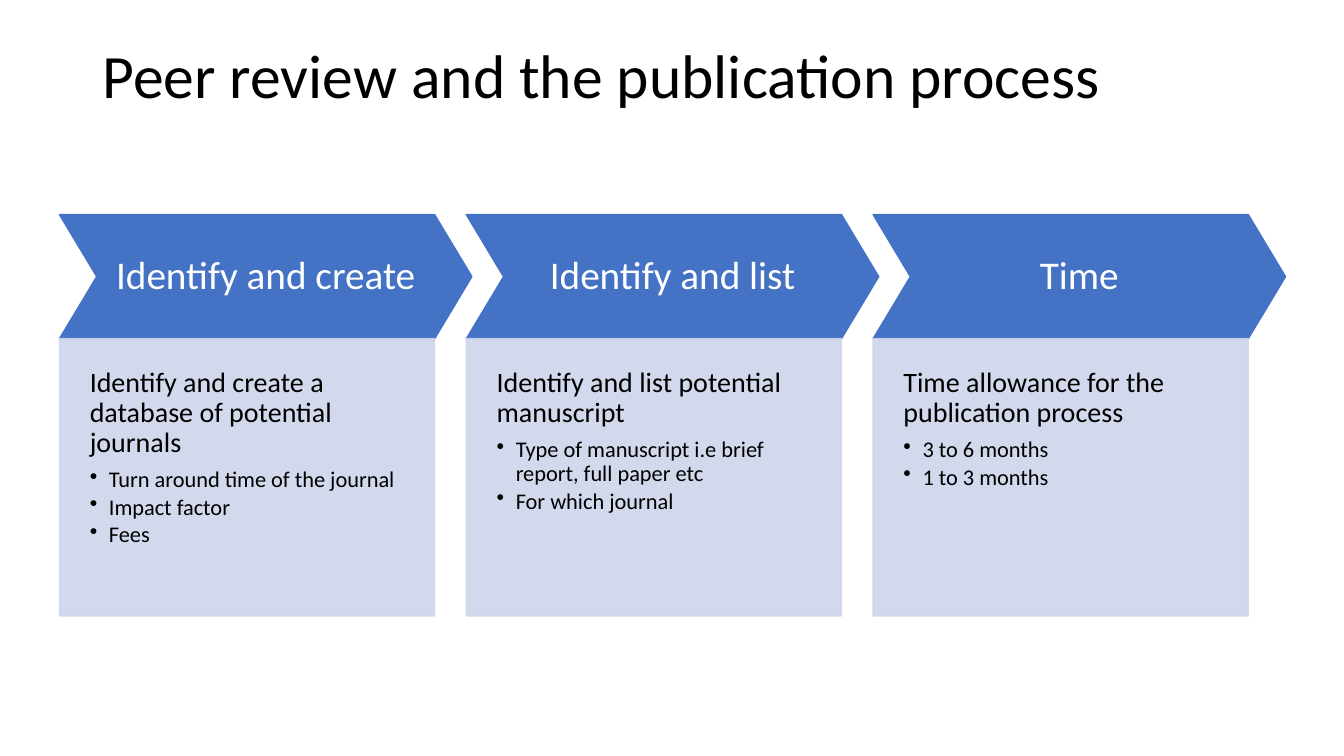
from dataclasses import dataclass

from lxml import etree
from pptx import Presentation
from pptx.dml.color import RGBColor
from pptx.enum.shapes import MSO_SHAPE
from pptx.enum.text import MSO_ANCHOR, PP_ALIGN
from pptx.oxml.ns import qn
from pptx.util import Inches, Pt

CHEVRON, RECTANGLE = MSO_SHAPE.CHEVRON, MSO_SHAPE.RECTANGLE
TOP, MIDDLE = MSO_ANCHOR.TOP, MSO_ANCHOR.MIDDLE
LEFT, CENTER = PP_ALIGN.LEFT, PP_ALIGN.CENTER


@dataclass(frozen=True)
class Theme:
    font: str = "Calibri"
    text: RGBColor = RGBColor(0x00, 0x00, 0x00)
    white: RGBColor = RGBColor(0xFF, 0xFF, 0xFF)
    step: RGBColor = RGBColor(0x44, 0x72, 0xC4)
    panel: RGBColor = RGBColor(0xCF, 0xD5, 0xEA)
    panel_opacity: int = 90
    title_size: int = 44
    step_size: int = 28
    lead_size: int = 20
    bullet_size: int = 16


THEME = Theme()

STEPS = [
    ("Identify and create",
     "Identify and create a database of potential journals",
     ["Turn around time of the journal", "Impact factor", "Fees"]),
    ("Identify and list",
     "Identify and list potential manuscript",
     ["Type of manuscript i.e brief report, full paper etc", "For which journal"]),
    ("Time",
     "Time allowance for the publication process",
     ["3 to 6 months", "1 to 3 months"]),
]

FIRST_LEFT, STEP_PITCH = 0.59, 4.035
STEP_TOP, STEP_WIDTH, STEP_HEIGHT = 2.13, 4.09, 1.23
PANEL_WIDTH, PANEL_HEIGHT = 3.72, 2.75
BULLET_INDENT = 0.19


def set_frame(tf, anchor, left, top, right, bottom):
    tf.word_wrap = True
    tf.vertical_anchor = anchor
    tf.margin_left, tf.margin_top = Inches(left), Inches(top)
    tf.margin_right, tf.margin_bottom = Inches(right), Inches(bottom)


def write(p, text, size, color, align=LEFT, after=0):
    p.text = text
    p.alignment = align
    p.line_spacing = 0.9
    p.space_after = Pt(size * after)
    for r in p.runs:
        r.font.name = THEME.font
        r.font.size = Pt(size)
        r.font.color.rgb = color


def add_bullet(p):
    p.level = 1
    pPr = p._p.get_or_add_pPr()
    pPr.set("marL", str(Inches(BULLET_INDENT)))
    pPr.set("indent", str(-Inches(BULLET_INDENT)))
    etree.SubElement(pPr, qn("a:buChar")).set("char", "•")


def set_opacity(shape, percent):
    for color in shape._element.spPr.iter(qn("a:srgbClr")):
        etree.SubElement(color, qn("a:alpha")).set("val", str(percent * 1000))


def add_block(s, kind, left, top, width, height, color):
    sp = s.shapes.add_shape(kind, Inches(left), Inches(top), Inches(width), Inches(height))
    sp.shadow.inherit = False
    sp.fill.solid()
    sp.fill.fore_color.rgb = color
    sp.line.color.rgb = color
    sp.line.width = Pt(1)
    return sp


def add_title(s, text):
    sp = s.shapes.add_textbox(Inches(0.92), Inches(0.4), Inches(11.5), Inches(1.45))
    set_frame(sp.text_frame, TOP, 0.1, 0.05, 0.1, 0.05)
    write(sp.text_frame.paragraphs[0], text, THEME.title_size, THEME.text)


def add_step(s, left, label):
    sp = add_block(s, CHEVRON, left, STEP_TOP, STEP_WIDTH, STEP_HEIGHT, THEME.step)
    sp.adjustments[0] = 0.3
    set_frame(sp.text_frame, MIDDLE, 0.15, 0.15, 0.15, 0.15)
    write(sp.text_frame.paragraphs[0], label, THEME.step_size, THEME.white, CENTER)


def add_panel(s, left, lead, bullets):
    sp = add_block(s, RECTANGLE, left, STEP_TOP + STEP_HEIGHT,
                   PANEL_WIDTH, PANEL_HEIGHT, THEME.panel)
    set_opacity(sp, THEME.panel_opacity)
    tf = sp.text_frame
    set_frame(tf, TOP, 0.3, 0.29, 0.29, 0.59)
    write(tf.paragraphs[0], lead, THEME.lead_size, THEME.text, after=0.35)
    for bullet in bullets:
        p = tf.add_paragraph()
        write(p, bullet, THEME.bullet_size, THEME.text, after=0.15)
        add_bullet(p)


def main():
    prs = Presentation()
    prs.slide_width, prs.slide_height = Inches(13.33), Inches(7.5)
    s = prs.slides.add_slide(prs.slide_layouts[6])
    add_title(s, "Peer review and the publication process")
    for i, (label, lead, bullets) in enumerate(STEPS):
        left = FIRST_LEFT + i * STEP_PITCH
        add_step(s, left, label)
        add_panel(s, left, lead, bullets)
    prs.save("out.pptx")


if __name__ == "__main__":
    main()
